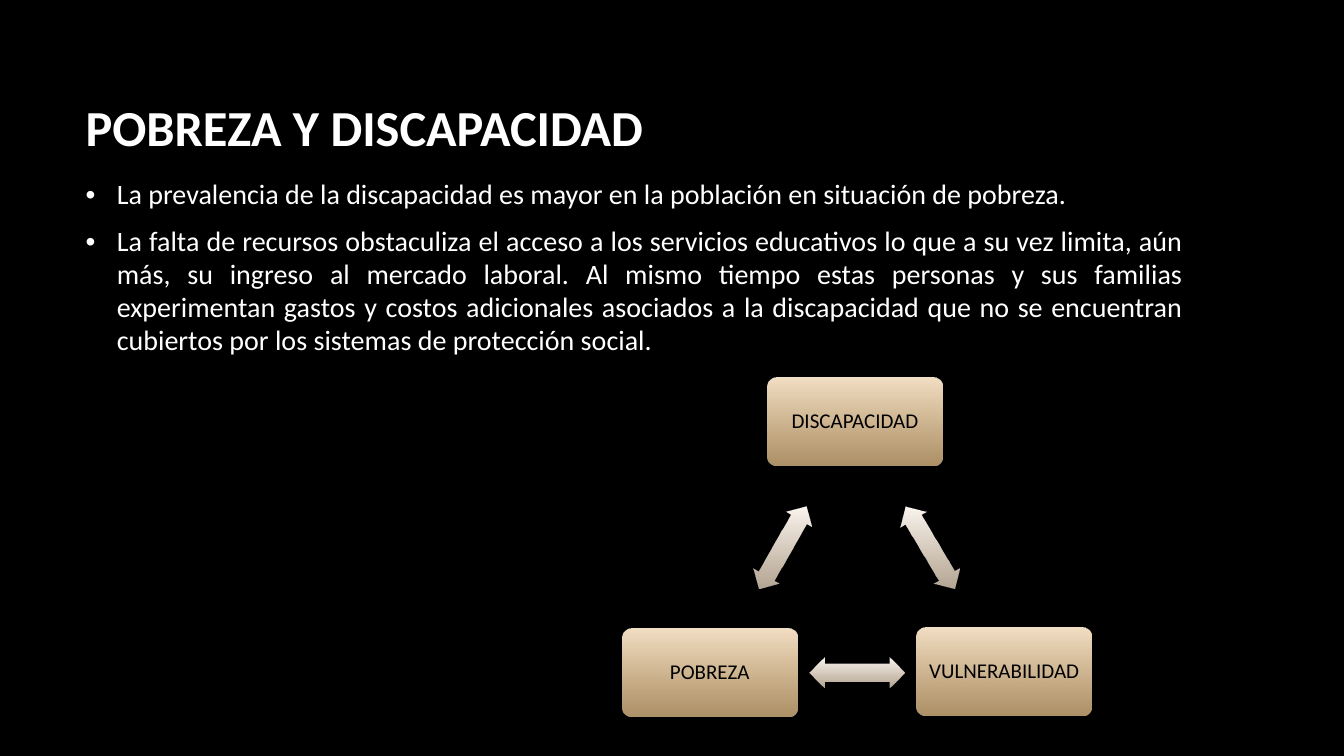
from lxml import etree
from pptx import Presentation
from pptx import util as u
from pptx.dml.color import RGBColor
from pptx.enum import shapes, text
from pptx.oxml.ns import qn

COLORS = {
    "background": "000000",
    "light_text": "FFFFFF",
    "dark_text": "000000",
    "node_top": "F4E0C5",
    "node_bottom": "EAC48C",
    "arrow_top": "FDF9F4",
    "arrow_bottom": "F3DEC5",
}
FONT = "Calibri"
TITLE = "POBREZA Y DISCAPACIDAD"
BULLETS = [
    "La prevalencia de la discapacidad es mayor en la población en situación de pobreza.",
    "La falta de recursos obstaculiza el acceso a los servicios educativos lo que a su vez "
    "limita, aún más, su ingreso al mercado laboral. Al mismo tiempo estas personas y sus "
    "familias experimentan gastos y costos adicionales asociados a la discapacidad que no se "
    "encuentran cubiertos por los sistemas de protección social.",
]
NODES = [  # label, left, top
    ("DISCAPACIDAD", 7.61, 3.75),
    ("VULNERABILIDAD", 9.09, 6.23),
    ("POBREZA", 6.17, 6.24),
]
ARROWS = [  # left, top, rotation
    (8.75, 5.28, 59.2),
    (8.03, 6.52, 179.9),
    (7.29, 5.28, 300),
]
NODE_SIZE = (1.74, 0.87)
ARROW_SIZE = (0.94, 0.3)
BOTTOM_OPACITY = 74
INDENT = 0.31


def rgb(name):
    return RGBColor.from_string(COLORS[name])


def apply(target, **values):
    for name, value in values.items():
        setattr(target, name, value)


def write(para, words, size, color, bold=False):
    para.text = words
    apply(para.font, name=FONT, size=u.Pt(size), bold=bold)
    para.font.color.rgb = rgb(color)


def add_text_box(page, left, top, width, height, anchor):
    box = page.shapes.add_textbox(*map(u.Inches, (left, top, width, height)))
    apply(box.text_frame, word_wrap=True, vertical_anchor=anchor)
    return box.text_frame


def add_bullet(para):
    props = para._p.get_or_add_pPr()
    props.set("marL", str(u.Inches(INDENT)))
    props.set("indent", str(-u.Inches(INDENT)))
    color = etree.SubElement(props, qn("a:buClr"))
    etree.SubElement(color, qn("a:srgbClr"), val=COLORS["light_text"])
    etree.SubElement(props, qn("a:buFont"), typeface="Arial")
    etree.SubElement(props, qn("a:buChar"), char="•")


def add_gradient_shape(page, preset, left, top, size, adjustments, kind):
    """Add an unlined shape that fades downwards, whatever its rotation."""
    shape = page.shapes.add_shape(preset, *map(u.Inches, (left, top, *size)))
    shape.shadow.inherit = False
    shape.line.fill.background()
    for index, value in enumerate(adjustments):
        shape.adjustments[index] = value
    shape.fill.gradient()
    shape.fill.gradient_angle = 270
    for stop, end in zip(shape.fill.gradient_stops, ("top", "bottom")):
        stop.color.rgb = rgb(f"{kind}_{end}")
    gradient = shape._element.spPr.find(qn("a:gradFill"))
    gradient.set("rotWithShape", "0")
    last_color = gradient.findall(".//" + qn("a:srgbClr"))[-1]
    etree.SubElement(last_color, qn("a:alpha"), val=str(BOTTOM_OPACITY * 1000))
    return shape


def main():
    deck = Presentation()
    apply(deck, slide_width=u.Inches(13.33), slide_height=u.Inches(7.5))
    page = deck.slides.add_slide(deck.slide_layouts[6])
    page.background.fill.solid()
    page.background.fill.fore_color.rgb = rgb("background")

    title = add_text_box(page, 0.75, 0.67, 11.08, 1.16, text.MSO_ANCHOR.MIDDLE)
    write(title.paragraphs[0], TITLE, 36, "light_text", bold=True)

    body = add_text_box(page, 0.75, 1.72, 11.08, 1.95, text.MSO_ANCHOR.TOP)
    for index, words in enumerate(BULLETS):
        para = body.add_paragraph() if index else body.paragraphs[0]
        apply(para, alignment=text.PP_ALIGN.JUSTIFY, line_spacing=0.98, space_after=u.Pt(10))
        add_bullet(para)
        write(para, words, 20, "light_text")

    for label, left, top in NODES:
        node = add_gradient_shape(page, shapes.MSO_SHAPE.ROUNDED_RECTANGLE,
                                  left, top, NODE_SIZE, [0.1], "node")
        frame = node.text_frame
        apply(frame, word_wrap=True, vertical_anchor=text.MSO_ANCHOR.MIDDLE)
        for side in ("left", "right", "top", "bottom"):
            setattr(frame, f"margin_{side}", u.Inches(0.08))
        para = frame.paragraphs[0]
        apply(para, alignment=text.PP_ALIGN.CENTER, line_spacing=0.9)
        write(para, label, 15, "dark_text")

    for left, top, rotation in ARROWS:
        arrow = add_gradient_shape(page, shapes.MSO_SHAPE.LEFT_RIGHT_ARROW,
                                   left, top, ARROW_SIZE, [0.6, 0.5], "arrow")
        arrow.rotation = rotation

    deck.save("out.pptx")


if __name__ == "__main__":
    main()
